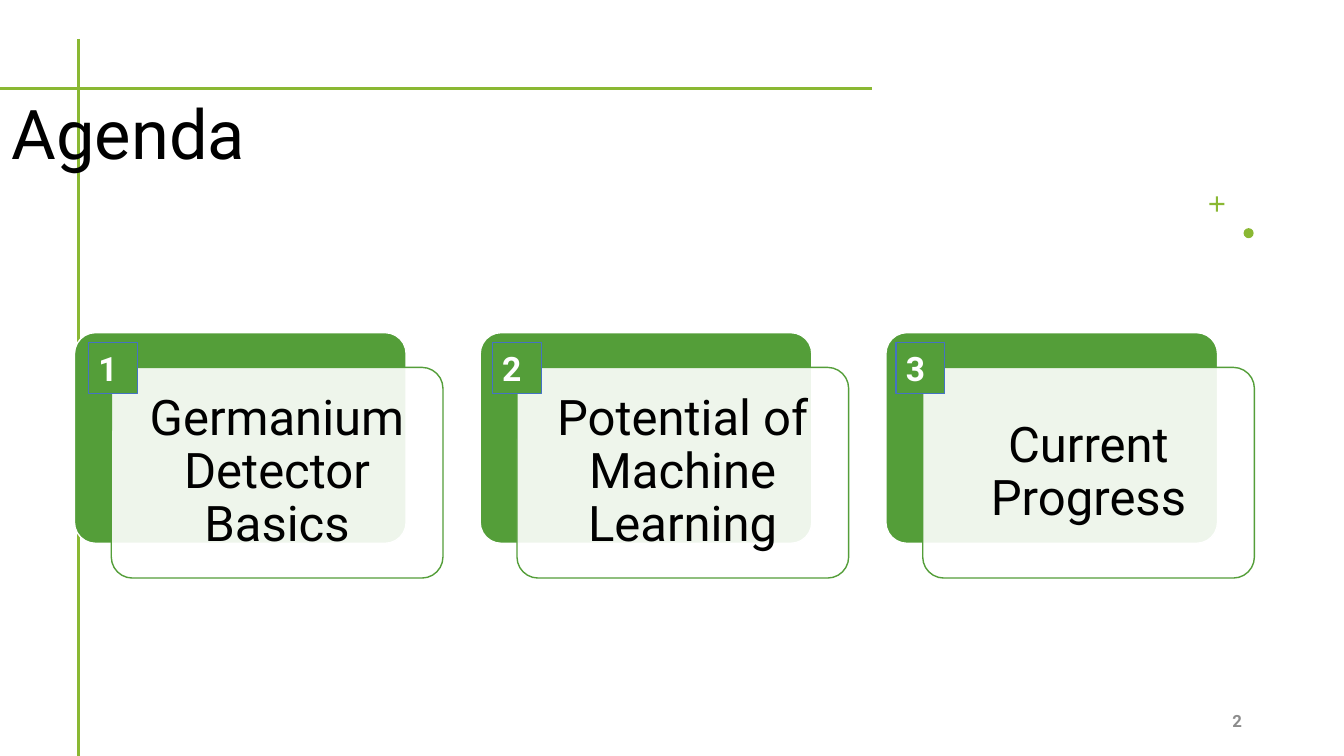
from dataclasses import dataclass

from lxml import etree
from pptx import Presentation
from pptx.dml.color import RGBColor
from pptx.enum import shapes, text
from pptx.oxml.ns import qn
from pptx.util import Pt

SHAPE = shapes.MSO_SHAPE
ALIGN = text.PP_ALIGN
ANCHOR = text.MSO_ANCHOR


@dataclass(frozen=True)
class Theme:
    font: str = "Roboto"
    green: str = "549E39"
    lime: str = "8AB833"
    blue: str = "4472C4"
    white: str = "FFFFFF"
    black: str = "000000"
    grey: str = "8C8C8C"
    title_size: float = 49
    card_size: float = 35
    badge_size: float = 24
    number_size: float = 12


def color(value):
    return RGBColor.from_string(value)


def write(box, words, theme, size, ink, bold=False, align=ALIGN.LEFT,
          anchor=ANCHOR.TOP, spacing=1.0, tracking=0, insets=(7.2, 3.6)):
    """Fill a box with one paragraph; insets are (sides, top and bottom)."""
    frame = box.text_frame
    frame.word_wrap = True
    frame.vertical_anchor = anchor
    frame.margin_left = frame.margin_right = Pt(insets[0])
    frame.margin_top = frame.margin_bottom = Pt(insets[1])
    para = frame.paragraphs[0]
    para.alignment = align
    para.line_spacing = spacing
    span = para.add_run()
    span.text = words
    span.font.name = theme.font
    span.font.size = Pt(size)
    span.font.bold = bold
    span.font.color.rgb = color(ink)
    if tracking:
        span.font._element.set("spc", str(tracking * 100))


class Painter:
    def __init__(self, page, theme):
        self.page = page
        self.theme = theme

    def rule(self, x1, y1, x2, y2):
        line = self.page.shapes.add_connector(
            shapes.MSO_CONNECTOR.STRAIGHT, Pt(x1), Pt(y1), Pt(x2), Pt(y2))
        line.line.color.rgb = color(self.theme.lime)
        line.line.width = Pt(2)
        etree.SubElement(line.element.spPr, qn("a:effectLst"))

    def shape(self, kind, left, top, width, height, fill, outline=None,
              weight=1, adjust=None, opacity=None):
        box = self.page.shapes.add_shape(
            kind, Pt(left), Pt(top), Pt(width), Pt(height))
        box.shadow.inherit = False
        box.fill.solid()
        box.fill.fore_color.rgb = color(fill)
        if outline:
            box.line.color.rgb = color(outline)
            box.line.width = Pt(weight)
        else:
            box.line.fill.background()
        if adjust is not None:
            box.adjustments[0] = adjust
        if opacity is not None:
            tint = box.element.spPr.find(qn("a:solidFill"))[0]
            etree.SubElement(tint, qn("a:alpha"), val=str(opacity * 1000))
        return box

    def label(self, words, left, top, width, height, **style):
        box = self.page.shapes.add_textbox(
            Pt(left), Pt(top), Pt(width), Pt(height))
        write(box, words, self.theme, **style)

    def card(self, words, left, top):
        """Draw a green plate with a translucent panel shifted over it."""
        theme = self.theme
        width, height = 236.9, 150.5
        self.shape(SHAPE.ROUNDED_RECTANGLE, left, top, width, height,
                   theme.green, theme.white, adjust=0.1)
        panel = self.shape(SHAPE.ROUNDED_RECTANGLE, left + 26.3, top + 24.8,
                           width, height, theme.white, theme.green,
                           adjust=0.1, opacity=90)
        write(panel, words, theme, theme.card_size, theme.black,
              align=ALIGN.CENTER, anchor=ANCHOR.MIDDLE, spacing=0.9,
              insets=(12, 12))

    def badge(self, number, left, top):
        theme = self.theme
        box = self.shape(SHAPE.RECTANGLE, left, top, 34.9, 36.3,
                         theme.green, theme.blue, weight=0.75)
        write(box, str(number), theme, theme.badge_size, theme.white, bold=True)


def main():
    theme = Theme()
    deck = Presentation()
    deck.slide_width, deck.slide_height = Pt(960), Pt(540)
    page = deck.slides.add_slide(deck.slide_layouts[6])
    painter = Painter(page, theme)

    painter.rule(56.2, 27.7, 56.2, 540)
    painter.rule(0, 63.1, 623, 63.1)
    painter.shape(SHAPE.CROSS, 863.8, 140.3, 10.8, 10.8, theme.lime, adjust=0.43)
    painter.shape(SHAPE.OVAL, 888.3, 163, 7.2, 7.2, theme.lime)

    topics = ["Germanium Detector Basics", "Potential of Machine Learning",
              "Current Progress"]
    for index, topic in enumerate(topics):
        painter.card(topic, 53.2 + 289.8 * index, 237.6)
        painter.badge(index + 1, 63.2 + 288.4 * index, 244.8)

    painter.label("Agenda", 1.4, 35.3, 487.4, 92.9, size=theme.title_size,
                  ink=theme.black, anchor=ANCHOR.BOTTOM, spacing=0.9)
    painter.label("2", 678.2, 500.4, 216, 28.8, size=theme.number_size,
                  ink=theme.grey, bold=True, align=ALIGN.RIGHT,
                  anchor=ANCHOR.MIDDLE, tracking=1)
    deck.save("out.pptx")


if __name__ == "__main__":
    main()
